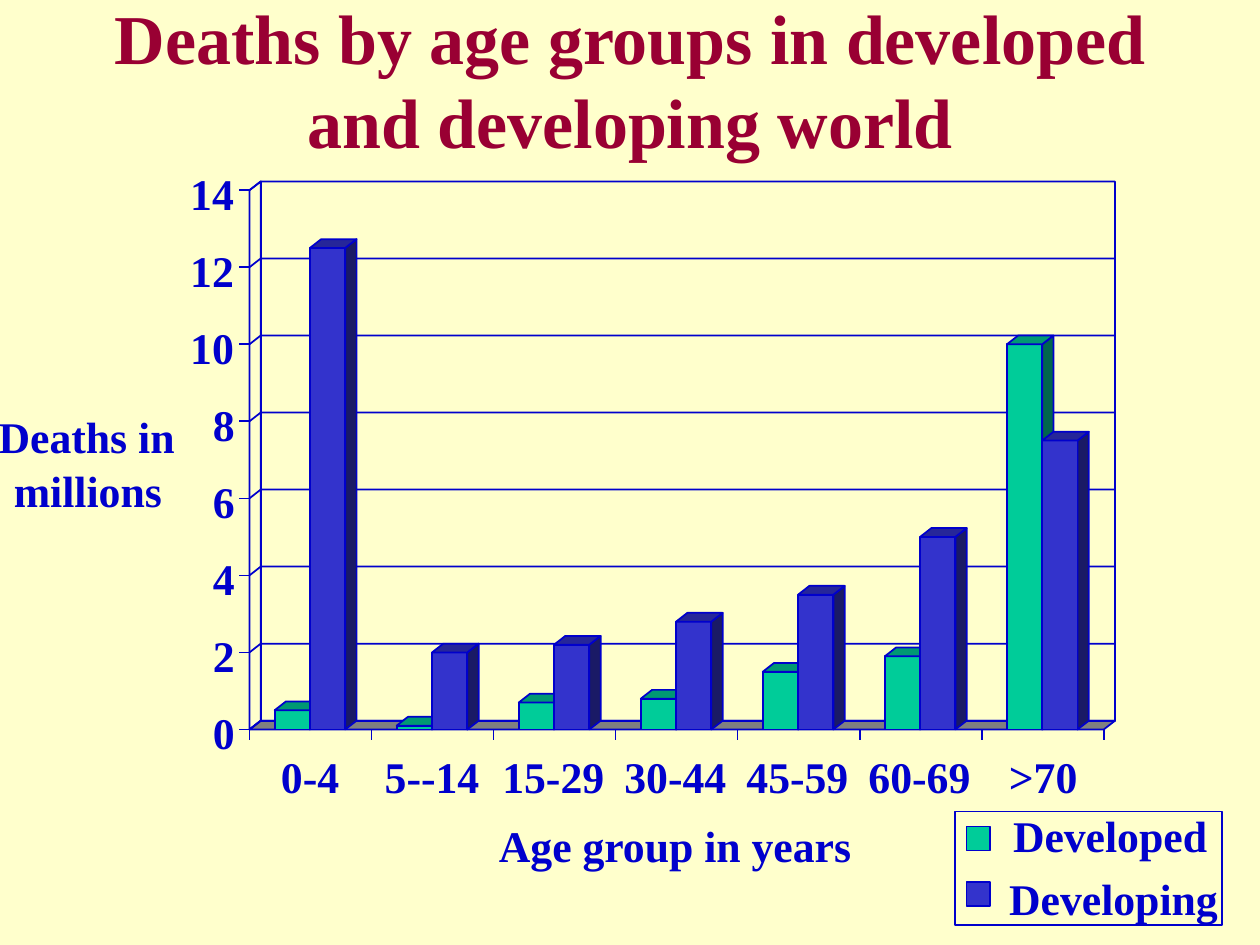
import pptx
import pptx.dml.color
import pptx.enum.shapes
import pptx.enum.text
import pptx.util
from lxml import etree
from pptx.util import Inches

FONT = "Times New Roman"
INK = "0000CC"
GREY = "808080"

# Plot geometry, in inches
LEFT, RIGHT, BASE = 1.98, 8.76, 5.79
HEIGHT, MAXIMUM = 4.28, 14
DEPTH_X, DEPTH_Y = 0.09, 0.07
TICK = 0.08
BAR_WIDTH, BAR_MARGIN = 0.28, 0.2

# Category, label width, deaths in developed and developing world
GROUPS = [
    ("0-4", 0.64, 0.5, 12.5),
    ("5--14", 0.93, 0.1, 2),
    ("15-29", 1, 0.7, 2.2),
    ("30-44", 1, 0.8, 2.8),
    ("45-59", 1, 1.5, 3.5),
    ("60-69", 1, 1.9, 5),
    (">70", 0.71, 10, 7.5),
]
STEP = (RIGHT - LEFT) / len(GROUPS)

# Front, top and side colour of each series
DEVELOPED = ("00CC99", "009973", "00664D")
DEVELOPING = ("3333CC", "262699", "1A1A66")


def rgb(value):
    return pptx.dml.color.RGBColor.from_string(value)


def level(value):
    return BASE - value * HEIGHT / MAXIMUM


def style(shape, fill, line):
    shape.shadow.inherit = False
    if fill:
        shape.fill.solid()
        shape.fill.fore_color.rgb = rgb(fill)
    else:
        shape.fill.background()
    if line:
        shape.line.color.rgb = rgb(line)
        shape.line.width = pptx.util.Pt(1)
    else:
        shape.line.fill.background()


def add_rect(page, left, top, width, height, fill=None):
    kind = pptx.enum.shapes.MSO_SHAPE.RECTANGLE
    box = page.shapes.add_shape(
        kind, Inches(left), Inches(top), Inches(width), Inches(height))
    style(box, fill, INK)


def add_outline(page, points, fill=None, line=INK, close=True):
    corners = [(Inches(x), Inches(y)) for x, y in points]
    builder = page.shapes.build_freeform(*corners[0])
    builder.add_line_segments(corners[1:], close=close)
    style(builder.convert_to_shape(), fill, line)


def add_line(page, x1, y1, x2, y2):
    line = page.shapes.add_connector(
        pptx.enum.shapes.MSO_CONNECTOR.STRAIGHT,
        Inches(x1), Inches(y1), Inches(x2), Inches(y2))
    line.line.color.rgb = rgb(INK)
    line.line.width = pptx.util.Pt(1)
    properties = line._element.spPr
    etree.SubElement(properties, pptx.oxml.ns.qn("a:effectLst"))


def format_text(frame, size, color):
    for para in frame.paragraphs:
        for span in para.runs:
            span.font.name = FONT
            span.font.size = pptx.util.Pt(size)
            span.font.bold = True
            span.font.color.rgb = rgb(color)


def add_title(page, text):
    box = page.shapes.add_textbox(
        Inches(0.75), Inches(0), Inches(8.5), Inches(1.25))
    frame = box.text_frame
    frame.word_wrap = True
    frame.vertical_anchor = pptx.enum.text.MSO_ANCHOR.MIDDLE
    frame.text = text
    frame.paragraphs[0].alignment = pptx.enum.text.PP_ALIGN.CENTER
    format_text(frame, 40, "990033")


def add_label(page, text, left, top, width, height=0.49):
    box = page.shapes.add_textbox(
        Inches(left), Inches(top), Inches(width), Inches(height))
    frame = box.text_frame
    frame.margin_left = frame.margin_right = 0
    frame.margin_top = frame.margin_bottom = 0
    frame.word_wrap = False
    frame.auto_size = pptx.enum.text.MSO_AUTO_SIZE.SHAPE_TO_FIT_TEXT
    frame.text = text
    format_text(frame, 25, INK)


def add_walls(page):
    back_left, back_right = LEFT + DEPTH_X, RIGHT + DEPTH_X
    back_base = BASE - DEPTH_Y
    back_top = back_base - HEIGHT
    floor = [(LEFT, BASE), (back_left, back_base),
             (back_right, back_base), (RIGHT, BASE)]
    add_outline(page, floor, fill=GREY, line=None)
    for value in range(0, MAXIMUM + 1, 2):
        y = level(value)
        add_outline(page, [(LEFT, y), (back_left, y - DEPTH_Y),
                           (back_right, y - DEPTH_Y)], close=False)
    add_outline(page, floor)
    add_outline(page, [(LEFT, BASE), (LEFT, level(MAXIMUM)),
                       (back_left, back_top), (back_left, back_base)])
    add_rect(page, back_left, back_top, RIGHT - LEFT, HEIGHT)


def add_bar(page, left, value, colors):
    front, top_color, side = colors
    right, top = left + BAR_WIDTH, level(value)
    back_top = top - DEPTH_Y
    add_outline(page, [(right, BASE), (right, top),
                       (right + DEPTH_X, back_top),
                       (right + DEPTH_X, BASE - DEPTH_Y)], fill=side)
    add_rect(page, left, top, BAR_WIDTH, BASE - top, front)
    add_outline(page, [(right, top), (right + DEPTH_X, back_top),
                       (left + DEPTH_X, back_top), (left, top)],
                fill=top_color)


def add_value_axis(page):
    add_line(page, LEFT, BASE, LEFT, level(MAXIMUM))
    for value in range(0, MAXIMUM + 1, 2):
        y = level(value)
        add_line(page, LEFT, y, LEFT - TICK, y)
        left, width = (1.69, 0.33) if value < 10 else (1.51, 0.51)
        add_label(page, str(value), left, y - 0.19, width)
    add_label(page, "Deaths in", -0.01, 3.25, 1.7)
    add_label(page, "millions", 0.11, 3.68, 1.38)


def add_category_axis(page):
    add_line(page, LEFT, BASE, RIGHT, BASE)
    for index in range(len(GROUPS) + 1):
        x = LEFT + index * STEP
        add_line(page, x, BASE, x, BASE + TICK)
    for index, (name, width, *_) in enumerate(GROUPS):
        center = 2.55 + index * STEP
        add_label(page, name, center - width / 2, 5.95, width)
    add_label(page, "Age group in years", 3.96, 6.5, 3.07)


def add_legend(page):
    add_rect(page, 7.58, 6.44, 2.12, 0.9)
    for name, color, key_top, left, top, width in [
            ("Developed", DEVELOPED[0], 6.56, 8.04, 6.42, 1.54),
            ("Developing", DEVELOPING[0], 7, 8.01, 6.92, 1.66)]:
        add_rect(page, 7.67, key_top, 0.19, 0.19, color)
        add_label(page, name, left, top, width, 0.42)


def main():
    deck = pptx.Presentation()
    deck.slide_width, deck.slide_height = Inches(10), Inches(7.5)
    page = deck.slides.add_slide(deck.slide_layouts[6])
    page.background.fill.solid()
    page.background.fill.fore_color.rgb = rgb("FFFFCC")

    add_title(page, "Deaths by age groups in developed and developing world")
    add_walls(page)
    # Bars, side by side within each age group
    for index, (_, _, developed, developing) in enumerate(GROUPS):
        left = LEFT + BAR_MARGIN + index * STEP
        add_bar(page, left, developed, DEVELOPED)
        add_bar(page, left + BAR_WIDTH, developing, DEVELOPING)
    add_value_axis(page)
    add_category_axis(page)
    add_legend(page)
    deck.save("out.pptx")


if __name__ == "__main__":
    main()
